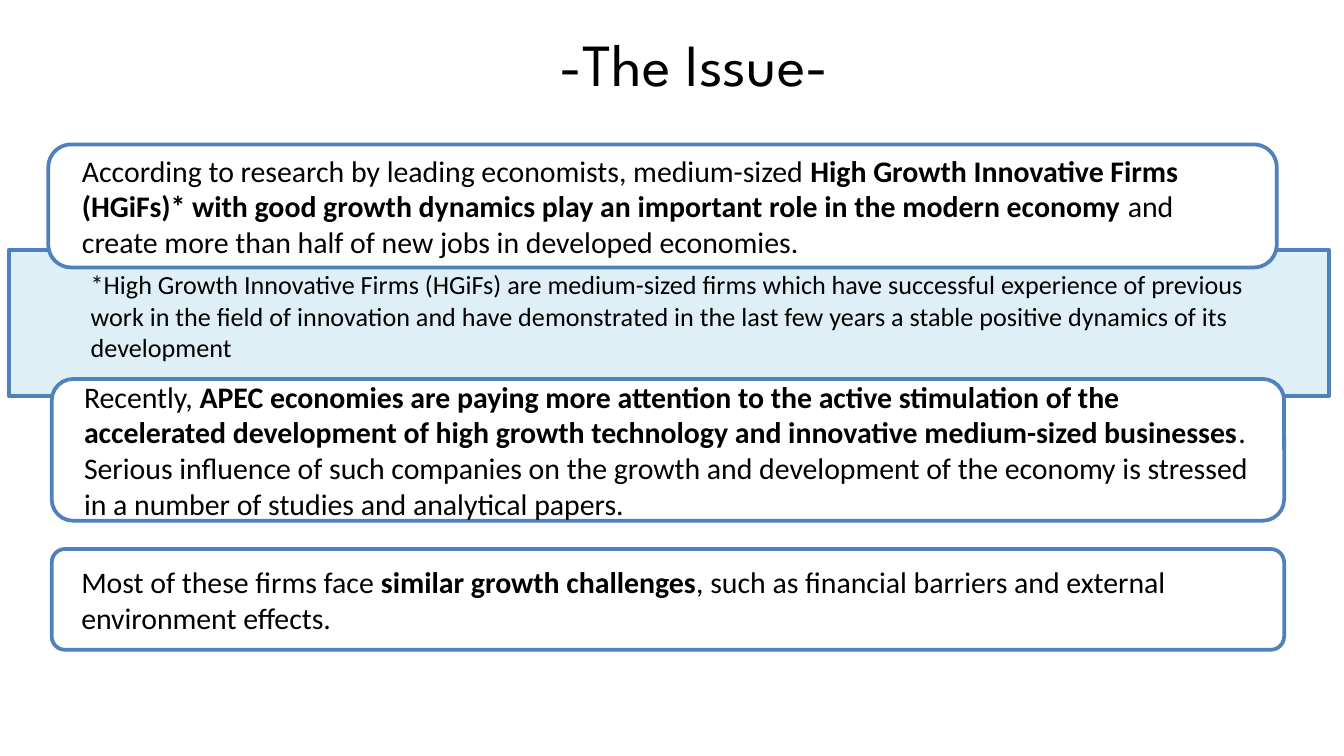
from lxml import etree
from pptx import Presentation
from pptx.dml.color import RGBColor
from pptx.enum import shapes, text
from pptx.oxml import ns
from pptx.util import Pt

PX = 4572
HUES = {"ink": "000000", "line": "4F81BD", "card": "FFFFFF", "band": "DBEEF4"}
KIND = shapes.MSO_SHAPE
MID, TOP = text.MSO_ANCHOR.MIDDLE, text.MSO_ANCHOR.TOP
LEFT, MIDST = text.PP_ALIGN.LEFT, text.PP_ALIGN.CENTER


def emu(*sizes):
    """Turn px lengths into EMU."""
    return [round(size * PX) for size in sizes]


def hue(name):
    """Look up a named colour."""
    return RGBColor.from_string(HUES[name])


def write(shape, *runs, size=16, face="Calibri", align=LEFT, anchor=MID, pad=(20, 10, 20, 10)):
    """Fill a shape with one paragraph, in which every second run is bold."""
    frame = shape.text_frame
    frame.word_wrap = True
    frame.vertical_anchor = anchor
    (frame.margin_left, frame.margin_top,
     frame.margin_right, frame.margin_bottom) = emu(*pad)
    line = frame.paragraphs[0]
    line.alignment = align
    for i, words in enumerate(runs):
        run = line.add_run()
        run.text = words
        run.font.size = Pt(size)
        run.font.name = face
        run.font.bold = i % 2 == 1
        run.font.color.rgb = hue("ink")


def panel(slide, kind, box, fill):
    """Add an outlined shape with a plain fill."""
    shape = slide.shapes.add_shape(kind, *emu(*box))
    shape.shadow.inherit = False
    shape.fill.solid()
    shape.fill.fore_color.rgb = hue(fill)
    shape.line.color.rgb = hue("line")
    shape.line.width = Pt(2)
    return shape


def title(slide, box, words):
    """Add the centred heading."""
    shape = slide.shapes.add_textbox(*emu(*box))
    write(shape, words, size=32, face="League Spartan", align=MIDST)


def card(slide, box, runs, curve, side):
    """Add a rounded card whose text starts a given distance from its side."""
    shape = panel(slide, KIND.ROUNDED_RECTANGLE, box, "card")
    shape.adjustments[0] = curve / min(box[2:])
    inset = side - 0.29 * curve
    write(shape, *runs, pad=(inset, 0, inset, 0))


def band(slide, box, words):
    """Add the see-through band that holds the footnote."""
    shape = panel(slide, KIND.RECTANGLE, box, "band")
    tint = shape.fill._xPr.find(".//" + ns.qn("a:srgbClr"))
    etree.SubElement(tint, ns.qn("a:alpha"), val="90000")
    write(shape, words, size=14, anchor=TOP, pad=(122, 28, 122, 18))


def main():
    """Build the slide and save it."""
    deck = Presentation()
    deck.slide_width, deck.slide_height = emu(2000, 1125)
    slide = deck.slides.add_slide(deck.slide_layouts[6])
    title(slide, (133, 0, 1800, 187), "-The Issue-")
    card(slide, (77, 817, 1834, 150), (
        "Most of these firms face ",
        "similar growth challenges",
        ", such as financial barriers and external environment effects.",
    ), curve=20, side=44)
    band(slide, (13, 372, 1965, 217),
         "*High Growth Innovative Firms (HGiFs) are medium-sized firms which have "
         "successful experience of previous work in the field of innovation and have "
         "demonstrated in the last few years a stable positive dynamics of its development")
    card(slide, (72, 215, 1828, 183), (
        "According to research by leading economists, medium-sized ",
        "High Growth Innovative Firms (HGiFs)* with good growth dynamics play an "
        "important role in the modern economy",
        " and create more than half of new jobs in developed economies.",
    ), curve=34, side=50)
    card(slide, (77, 564, 1834, 211), (
        "Recently, ",
        "APEC economies are paying more attention to the active stimulation of the "
        "accelerated development of high growth technology and innovative "
        "medium-sized businesses",
        ". Serious influence of such companies on the growth and development of the "
        "economy is stressed in a number of studies and analytical papers.",
    ), curve=32, side=48)
    deck.save("out.pptx")


if __name__ == "__main__":
    main()
